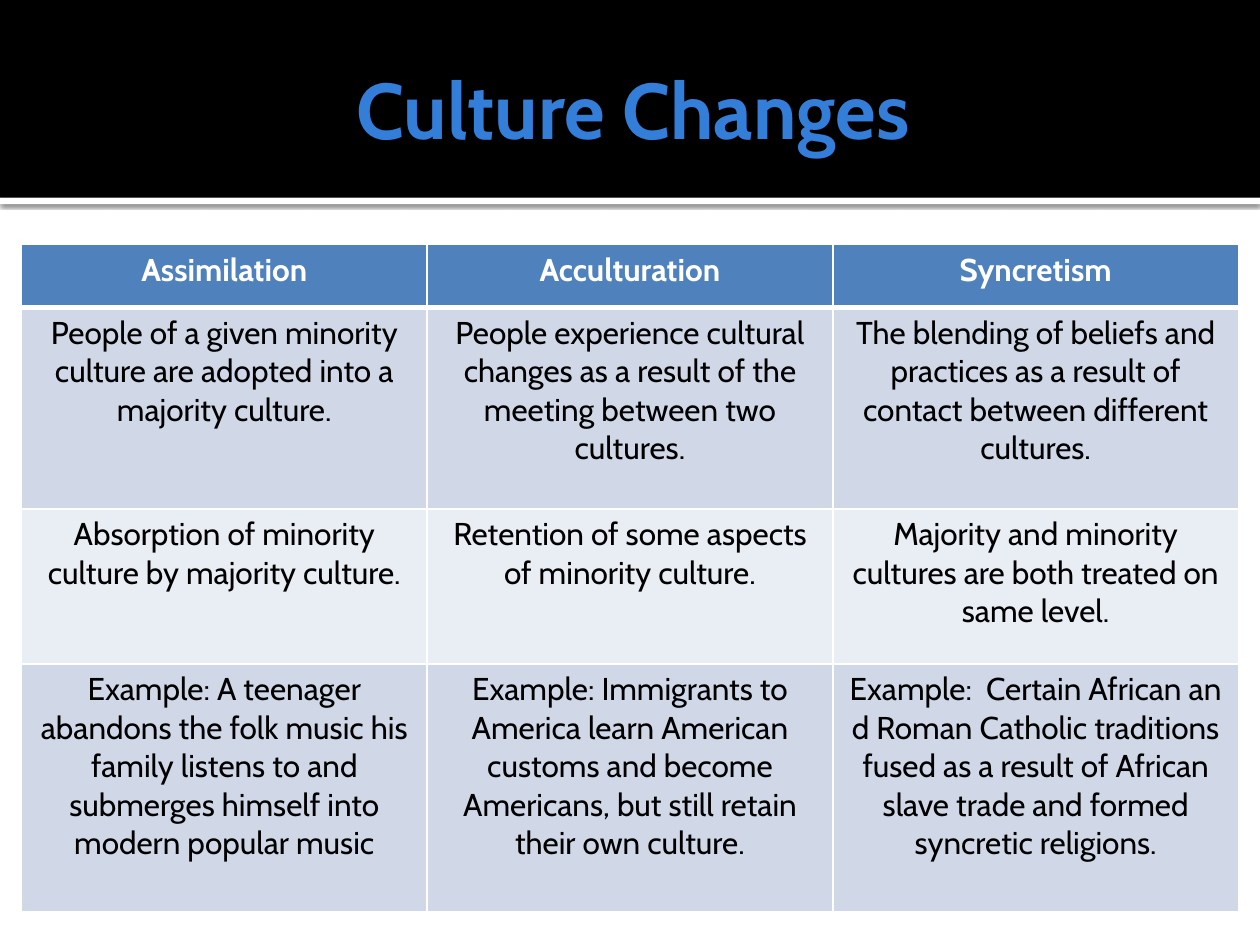
from lxml import etree
from pptx import Presentation
from pptx.dml.color import RGBColor
from pptx.enum.shapes import MSO_SHAPE
from pptx.enum.text import MSO_ANCHOR, PP_ALIGN
from pptx.oxml import parse_xml
from pptx.oxml.ns import qn
from pptx.util import Inches, Pt

RECTANGLE = MSO_SHAPE.RECTANGLE
MIDDLE = MSO_ANCHOR.MIDDLE
CENTER = PP_ALIGN.CENTER
BLANK_LAYOUT = 6

FONT = "Cabin"
WHITE, BLACK = "FFFFFF", "000000"
TITLE_BLUE, HEADER_BLUE = "337ED9", "4F81BD"
BANDS = ["D0D8E8", "E9EDF4"]
ROW_HEIGHTS = [0.5, 1.6, 1.23, 1.97]
DRAWING_NS = "http://schemas.openxmlformats.org/drawingml/2006/main"

CULTURE_CHANGES = [
    ["Assimilation", "Acculturation", "Syncretism"],
    [
        "People of a given minority culture are adopted into a majority culture.",
        "People experience cultural changes as a result of the meeting between two cultures.",
        "The blending of beliefs and practices as a result of contact between different cultures.",
    ],
    [
        "Absorption of minority culture by majority culture.",
        "Retention of some aspects of minority culture.",
        "Majority and minority cultures are both treated on same level.",
    ],
    [
        "Example: A teenager abandons the folk music his family listens to and "
        "submerges himself into modern popular music",
        "Example: Immigrants to America learn American customs and become "
        "Americans, but still retain their own culture.",
        "Example:  Certain African an d Roman Catholic traditions fused as a "
        "result of African slave trade and formed syncretic religions.",
    ],
]


def color(hex_string):
    """Return the colour for a hex string."""
    return RGBColor.from_string(hex_string)


def write(text_frame, words, size, hex_string, bold):
    """Add one centred run to the first paragraph of a text frame."""
    paragraph = text_frame.paragraphs[0]
    paragraph.alignment = CENTER
    run = paragraph.add_run()
    run.text = words
    run.font.name = FONT
    run.font.size = Pt(size)
    run.font.bold = bold
    run.font.color.rgb = color(hex_string)


def add_band(slide, left, top, width, height, hex_string):
    """Add a plain filled rectangle and return it."""
    band = slide.shapes.add_shape(
        RECTANGLE, Inches(left), Inches(top), Inches(width), Inches(height)
    )
    band.shadow.inherit = False
    band.fill.solid()
    band.fill.fore_color.rgb = color(hex_string)
    band.line.fill.background()
    return band


def cast_shadow(band):
    """Give a band a soft shadow that falls straight down."""
    effects = band.fill._xPr.find(qn("a:effectLst"))
    shadow = etree.SubElement(
        effects, qn("a:outerShdw"), blurRad=str(Pt(2.5)), dist=str(Pt(0.8)),
        dir="5400000", algn="tl", rotWithShape="0",
    )
    tint = etree.SubElement(shadow, qn("a:srgbClr"), val=BLACK)
    etree.SubElement(tint, qn("a:alpha"), val="60000")


def add_title_region(slide, left, top, width, height):
    """Add the black heading band, its white rule and the title."""
    rule = add_band(slide, left, top + height, width, 0.05, WHITE)
    cast_shadow(rule)
    add_band(slide, left, top, width, height, BLACK)
    title = slide.shapes.add_textbox(
        Inches(left + 0.5), Inches(top + 0.17), Inches(width - 1), Inches(height - 0.2)
    )
    frame = title.text_frame
    frame.word_wrap = True
    frame.vertical_anchor = MIDDLE
    frame.margin_left = Inches(0.1)
    frame.margin_right = frame.margin_top = frame.margin_bottom = Inches(0.05)
    write(frame, "Culture Changes", 45, TITLE_BLUE, True)


def set_borders(cell, top, bottom):
    """Draw white cell borders with the given top and bottom widths."""
    properties = cell._tc.get_or_add_tcPr()
    widths = {"lnL": 1, "lnR": 1, "lnT": top, "lnB": bottom}
    for position, (side, width) in enumerate(widths.items()):
        border = parse_xml(
            f'<a:{side} xmlns:a="{DRAWING_NS}" w="{Pt(width)}"><a:solidFill>'
            f'<a:srgbClr val="{WHITE}"/></a:solidFill></a:{side}>'
        )
        properties.insert(position, border)


def add_comparison_table(slide, left, top, width):
    """Add the table comparing three kinds of culture change."""
    columns = len(CULTURE_CHANGES[0])
    table = slide.shapes.add_table(
        len(CULTURE_CHANGES), columns, Inches(left), Inches(top),
        Inches(width), Inches(sum(ROW_HEIGHTS)),
    ).table
    for column in table.columns:
        column.width = Inches(width / columns)
    for row, entries in enumerate(CULTURE_CHANGES):
        table.rows[row].height = Inches(ROW_HEIGHTS[row])
        header = row == 0
        for column, words in enumerate(entries):
            cell = table.cell(row, column)
            cell.fill.solid()
            cell.fill.fore_color.rgb = color(HEADER_BLUE if header else BANDS[(row - 1) % 2])
            set_borders(cell, 3 if row == 1 else 1, 3 if header else 1)
            write(cell.text_frame, words, 18, WHITE if header else BLACK, header)


def main():
    """Build and save the slide."""
    presentation = Presentation()
    presentation.slide_width = Inches(10)
    presentation.slide_height = Inches(7.5)
    slide = presentation.slides.add_slide(presentation.slide_layouts[BLANK_LAYOUT])
    slide.background.fill.solid()
    slide.background.fill.fore_color.rgb = color(WHITE)
    add_title_region(slide, 0, 0, 10, 1.57)
    add_comparison_table(slide, 0.17, 1.94, 9.66)
    presentation.save("out.pptx")


if __name__ == "__main__":
    main()
